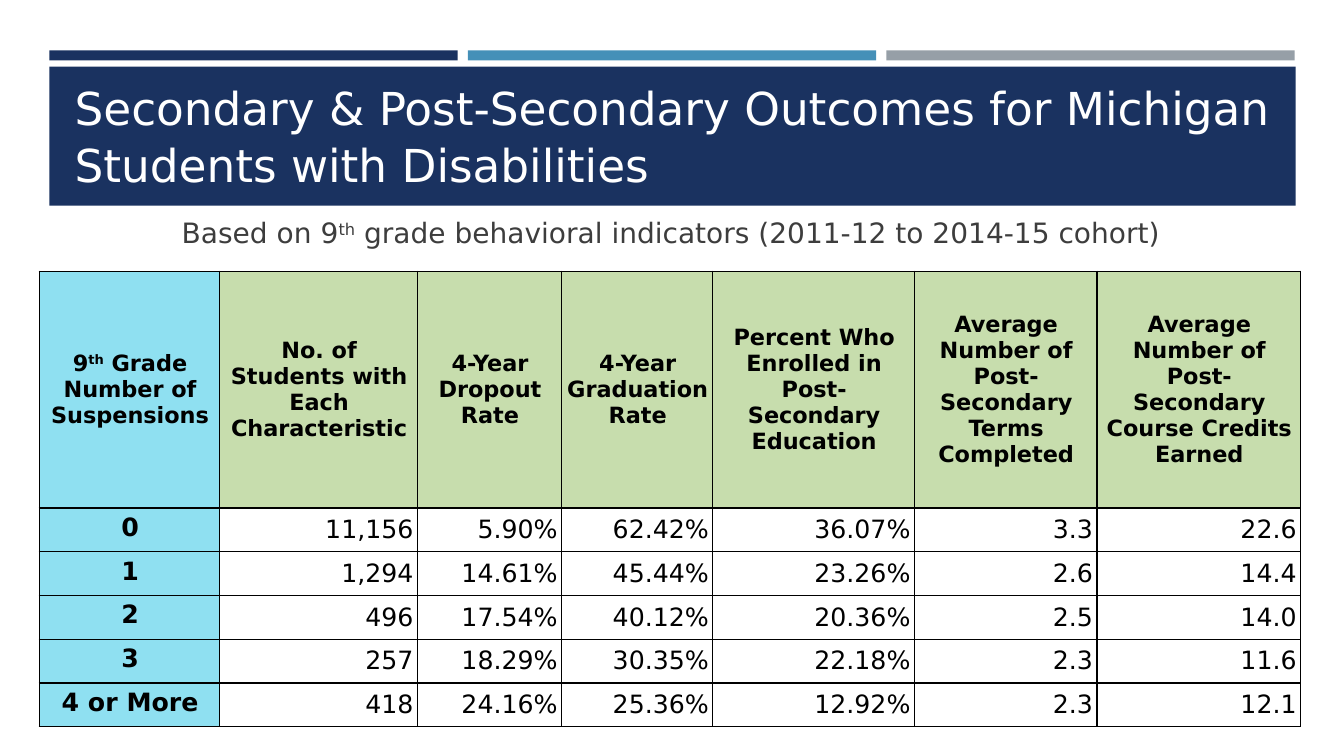
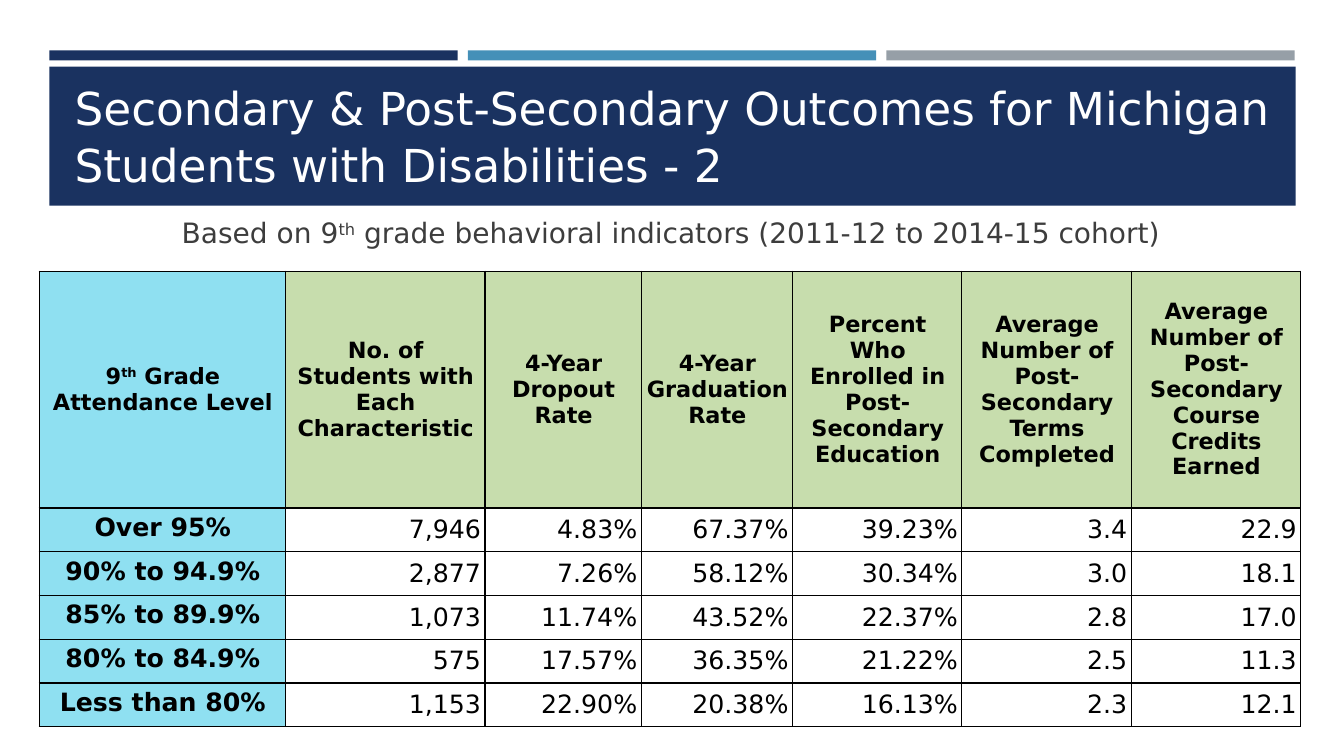
"""Build two slides of outcome tables for Michigan students with disabilities."""
import pptx
import pptx.dml.color
import pptx.enum.shapes
import pptx.enum.text
import pptx.oxml
import pptx.oxml.ns
import pptx.util

Inches = pptx.util.Inches
Pt = pptx.util.Pt
ALIGN = pptx.enum.text.PP_ALIGN
ANCHOR = pptx.enum.text.MSO_ANCHOR

COLORS = {
    "navy": "1A3260",
    "blue": "4590B8",
    "gray": "969FA7",
    "white": "FFFFFF",
    "subtitle": "3D3D3D",
    "black": "000000",
    "label": "8FE0F1",
    "header": "C7DDAD",
}
TITLE = "Secondary & Post-Secondary Outcomes for Michigan Students with Disabilities"
SUBTITLE = "Based on 9^th^ grade behavioral indicators (2011-12 to 2014-15 cohort)"
MEASURES = [
    "No. of Students with Each Characteristic",
    "4-Year Dropout Rate",
    "4-Year Graduation Rate",
    "Percent Who Enrolled in Post-Secondary Education",
    "Average Number of Post-Secondary Terms Completed",
    "Average Number of Post-Secondary Course Credits Earned",
]
SLIDES = [
    {
        "title": TITLE,
        "label": "9^th^ Grade Number of Suspensions",
        "widths": [1.79, 1.96, 1.43, 1.5, 2, 1.81, 2.02],
        "rows": [
            ["0", "11,156", "5.90%", "62.42%", "36.07%", "3.3", "22.6"],
            ["1", "1,294", "14.61%", "45.44%", "23.26%", "2.6", "14.4"],
            ["2", "496", "17.54%", "40.12%", "20.36%", "2.5", "14.0"],
            ["3", "257", "18.29%", "30.35%", "22.18%", "2.3", "11.6"],
            ["4 or More", "418", "24.16%", "25.36%", "12.92%", "2.3", "12.1"],
        ],
    },
    {
        "title": TITLE + " - 2",
        "label": "9^th^ Grade Attendance Level",
        "widths": [2.44, 1.98, 1.55, 1.5, 1.68, 1.68, 1.68],
        "rows": [
            ["Over 95%", "7,946", "4.83%", "67.37%", "39.23%", "3.4", "22.9"],
            ["90% to 94.9%", "2,877", "7.26%", "58.12%", "30.34%", "3.0", "18.1"],
            ["85% to 89.9%", "1,073", "11.74%", "43.52%", "22.37%", "2.8", "17.0"],
            ["80% to 84.9%", "575", "17.57%", "36.35%", "21.22%", "2.5", "11.3"],
            ["Less than 80%", "1,153", "22.90%", "20.38%", "16.13%", "2.3", "12.1"],
        ],
    },
]


def rgb(name):
    """Return the named colour."""
    return pptx.dml.color.RGBColor.from_string(COLORS[name])


class Deck:
    """Hold the shared style and the current slide."""

    font_name = "DejaVu Sans"

    def __init__(self):
        """Start an empty widescreen presentation."""
        self.presentation = pptx.Presentation()
        self.presentation.slide_width = Inches(13.33)
        self.presentation.slide_height = Inches(7.5)
        self.slide = None

    def add_text(self, frame, text, size, color, align, bold=False):
        """Add one paragraph of text, raising the parts between carets."""
        paragraph = frame.paragraphs[0]
        paragraph.alignment = align
        for index, part in enumerate(text.split("^")):
            run = paragraph.add_run()
            run.text = part
            run.font.name = self.font_name
            run.font.size = Pt(size)
            run.font.bold = bold
            run.font.color.rgb = rgb(color)
            if index % 2:
                run._r.get_or_add_rPr().set("baseline", "30000")
        return paragraph

    def band(self, left, top, width, height, color):
        """Draw a plain filled band."""
        shape = self.slide.shapes.add_shape(
            pptx.enum.shapes.MSO_SHAPE.RECTANGLE,
            Inches(left), Inches(top), Inches(width), Inches(height))
        shape.shadow.inherit = False
        shape.fill.solid()
        shape.fill.fore_color.rgb = rgb(color)
        shape.line.fill.background()

    def add_slide(self, title):
        """Add a slide with its bands, title and subtitle."""
        self.slide = self.presentation.slides.add_slide(self.presentation.slide_layouts[5])
        for index, color in enumerate(["navy", "blue", "gray"]):
            self.band(0.49 + 4.15 * index, 0.5, 4.05, 0.1, color)
        self.band(0.49, 0.66, 12.36, 1.38, "navy")
        self.title(title)
        self.subtitle(SUBTITLE)

    def title(self, text):
        """Place the title in front of its band."""
        shape = self.slide.shapes.title
        shape.element.getparent().append(shape.element)
        shape.left, shape.top = Inches(0.64), Inches(0.8)
        shape.width, shape.height = Inches(12.06), Inches(1.08)
        frame = shape.text_frame
        frame.auto_size = pptx.enum.text.MSO_AUTO_SIZE.NONE
        frame.word_wrap = True
        frame.vertical_anchor = ANCHOR.MIDDLE
        frame.margin_right = Inches(0.05)
        self.add_text(frame, text, 32.4, "white", ALIGN.LEFT).line_spacing = 1.04

    def subtitle(self, text):
        """Add the centred line under the title."""
        shape = self.slide.shapes.add_textbox(
            Inches(0.48), Inches(2.09), Inches(12.35), Inches(0.6))
        shape.text_frame.word_wrap = True
        self.add_text(shape.text_frame, text, 20, "subtitle", ALIGN.CENTER)

    def cell(self, cell, text, fill, size, align, bold, anchor=ANCHOR.MIDDLE):
        """Fill in one table cell with a thin black border."""
        properties = cell._tc.get_or_add_tcPr()
        for side in "LRTB":
            properties.append(pptx.oxml.parse_xml(
                f'<a:ln{side} {pptx.oxml.ns.nsdecls("a")} w="12700"><a:solidFill>'
                f'<a:srgbClr val="{COLORS["black"]}"/></a:solidFill></a:ln{side}>'))
        cell.fill.solid()
        cell.fill.fore_color.rgb = rgb(fill)
        cell.margin_left = cell.margin_top = cell.margin_bottom = Inches(0.05)
        cell.margin_right = Inches(0.04)
        cell.vertical_anchor = anchor
        self.add_text(cell.text_frame, text, size, "black", align, bold)

    def table(self, label, widths, rows):
        """Add the outcome table."""
        height, header_height = 4.52, 2.35
        table = self.slide.shapes.add_table(
            len(rows) + 1, len(widths), Inches(0.39), Inches(2.69),
            Inches(sum(widths)), Inches(height)).table
        table.first_row = table.horz_banding = False
        for column, width in zip(table.columns, widths):
            column.width = Inches(width)
        for row in table.rows:
            row.height = Inches((height - header_height) / len(rows))
        table.rows[0].height = Inches(header_height)
        for column, text in enumerate([label] + MEASURES):
            fill = "header" if column else "label"
            self.cell(table.cell(0, column), text, fill, 16, ALIGN.CENTER, True)
        for row, (name, *values) in enumerate(rows, 1):
            self.cell(table.cell(row, 0), name, "label", 18, ALIGN.CENTER, True, ANCHOR.TOP)
            for column, value in enumerate(values, 1):
                self.cell(table.cell(row, column), value, "white", 18, ALIGN.RIGHT, False)


def main():
    """Build and save the presentation."""
    deck = Deck()
    for content in SLIDES:
        deck.add_slide(content["title"])
        deck.table(content["label"], content["widths"], content["rows"])
    deck.presentation.save("out.pptx")


if __name__ == "__main__":
    main()
